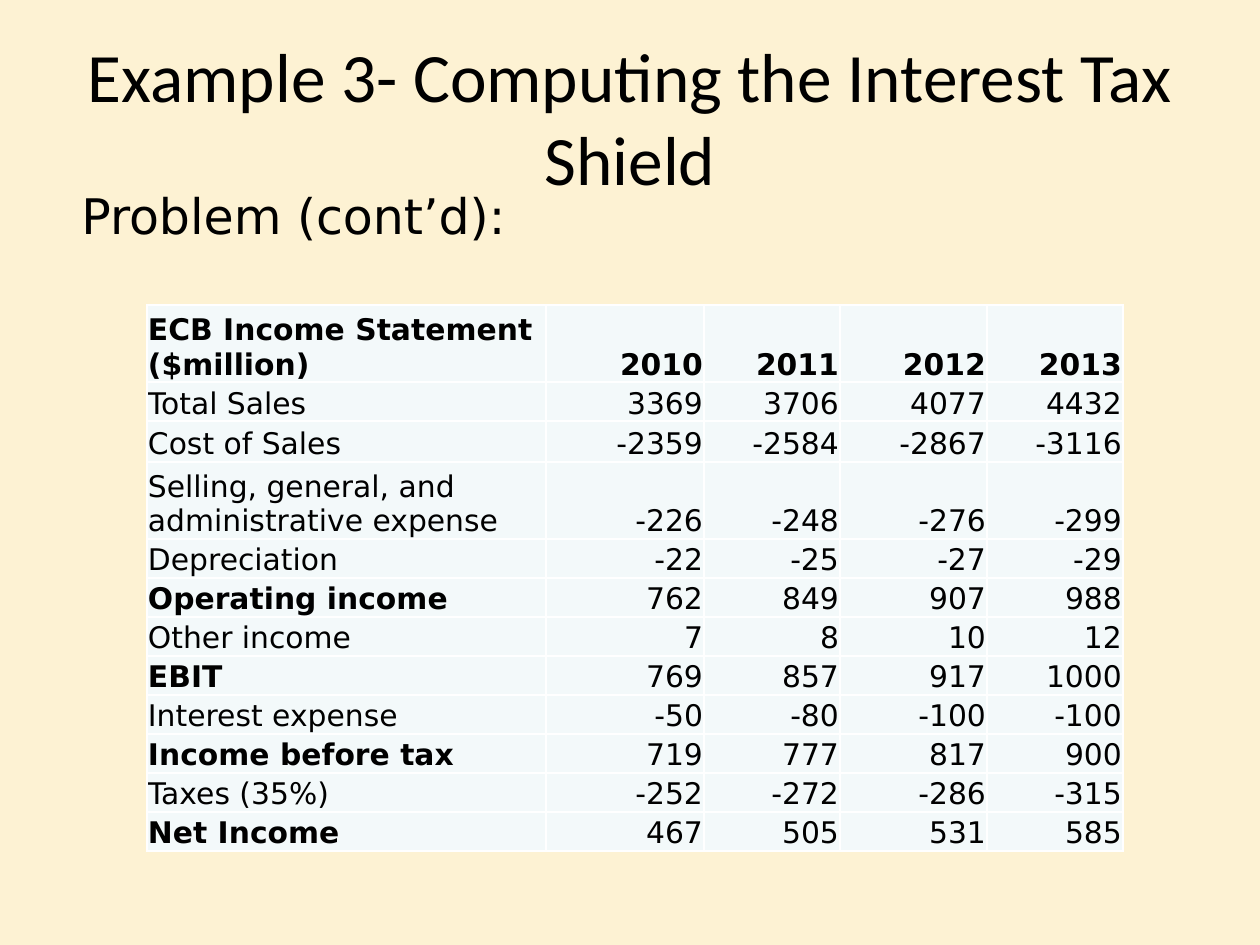
from typing import NamedTuple

from lxml.etree import SubElement
from pptx import Presentation
from pptx.dml.color import RGBColor
from pptx.enum.text import MSO_ANCHOR, MSO_AUTO_SIZE, PP_ALIGN
from pptx.oxml.ns import qn
from pptx.util import Emu, Pt

PX_PER_INCH = 126
CREAM = RGBColor(0xFD, 0xF2, 0xD3)
PALE_BLUE = RGBColor(0xF3, 0xF9, 0xFA)
WHITE = RGBColor(0xFF, 0xFF, 0xFF)
BLACK = RGBColor(0x00, 0x00, 0x00)
TITLE_FONT = "Calibri"
BODY_FONT = "DejaVu Sans"
COL_WIDTHS = (399, 158, 136, 147, 136)


class Row(NamedTuple):
    label: str
    values: tuple[int, ...]
    height: int = 39
    bold_label: bool = False
    bold_values: bool = False


ROWS = (
    Row("ECB Income Statement ($million)", (2010, 2011, 2012, 2013), 77, True, True),
    Row("Total Sales", (3369, 3706, 4077, 4432)),
    Row("Cost of Sales", (-2359, -2584, -2867, -3116), 41),
    Row("Selling, general, and administrative expense", (-226, -248, -276, -299), 77),
    Row("Depreciation", (-22, -25, -27, -29)),
    Row("Operating income", (762, 849, 907, 988), bold_label=True),
    Row("Other income", (7, 8, 10, 12)),
    Row("EBIT", (769, 857, 917, 1000), bold_label=True),
    Row("Interest expense", (-50, -80, -100, -100)),
    Row("Income before tax", (719, 777, 817, 900), bold_label=True),
    Row("Taxes (35%)", (-252, -272, -286, -315)),
    Row("Net Income", (467, 505, 531, 585), bold_label=True),
)


def px(n: int) -> Emu:
    return Emu(round(n * 914400 / PX_PER_INCH))


def add_run(p, text: str, font: str, size: float, bold: bool = False) -> None:
    r = p.add_run()
    r.text = text
    r.font.name = font
    r.font.size = Pt(size)
    r.font.bold = bold
    r.font.color.rgb = BLACK


def add_borders(cell) -> None:
    tc_pr = cell._tc.get_or_add_tcPr()
    for side in ("lnL", "lnR", "lnT", "lnB"):
        ln = SubElement(tc_pr, qn(f"a:{side}"), w=str(Pt(1)))
        fill = SubElement(ln, qn("a:solidFill"))
        SubElement(fill, qn("a:srgbClr"), val=str(WHITE))


def fill_cell(cell, text: str, align: PP_ALIGN, bold: bool) -> None:
    # Borders must come before the fill in the cell properties.
    add_borders(cell)
    cell.fill.solid()
    cell.fill.fore_color.rgb = PALE_BLUE
    cell.vertical_anchor = MSO_ANCHOR.BOTTOM
    cell.margin_left = cell.margin_right = cell.margin_top = px(1)
    cell.margin_bottom = 0
    p = cell.text_frame.paragraphs[0]
    p.alignment = align
    add_run(p, text, BODY_FONT, 17, bold)


def add_title(s) -> None:
    sp = s.shapes.title
    sp.left, sp.top, sp.width, sp.height = px(63), px(38), px(1134), px(157)
    tf = sp.text_frame
    tf.word_wrap = True
    tf.auto_size = MSO_AUTO_SIZE.NONE
    tf.vertical_anchor = MSO_ANCHOR.MIDDLE
    p = tf.paragraphs[0]
    p.alignment = PP_ALIGN.CENTER
    add_run(p, "Example 3- Computing the Interest Tax Shield", TITLE_FONT, 39.6)


def add_income_statement(s) -> None:
    frame = s.shapes.add_table(
        len(ROWS), len(COL_WIDTHS), px(147), px(305),
        px(sum(COL_WIDTHS)), px(sum(row.height for row in ROWS)))
    table = frame.table
    table.first_row = table.horz_banding = False
    for col, width in zip(table.columns, COL_WIDTHS):
        col.width = px(width)
    for i, row in enumerate(ROWS):
        table.rows[i].height = px(row.height)
        fill_cell(table.cell(i, 0), row.label, PP_ALIGN.LEFT, row.bold_label)
        for j, value in enumerate(row.values, start=1):
            fill_cell(table.cell(i, j), str(value), PP_ALIGN.RIGHT, row.bold_values)


def add_subtitle(s) -> None:
    tf = s.shapes.add_textbox(px(69), px(179), px(735), px(72)).text_frame
    tf.word_wrap = True
    tf.auto_size = MSO_AUTO_SIZE.SHAPE_TO_FIT_TEXT
    add_run(tf.paragraphs[0], "Problem (cont’d):", BODY_FONT, 28)


def main() -> None:
    prs = Presentation()
    prs.slide_width, prs.slide_height = px(1260), px(945)
    s = prs.slides.add_slide(prs.slide_layouts[5])
    s.background.fill.solid()
    s.background.fill.fore_color.rgb = CREAM
    add_title(s)
    add_income_statement(s)
    add_subtitle(s)
    prs.save("out.pptx")


if __name__ == "__main__":
    main()
